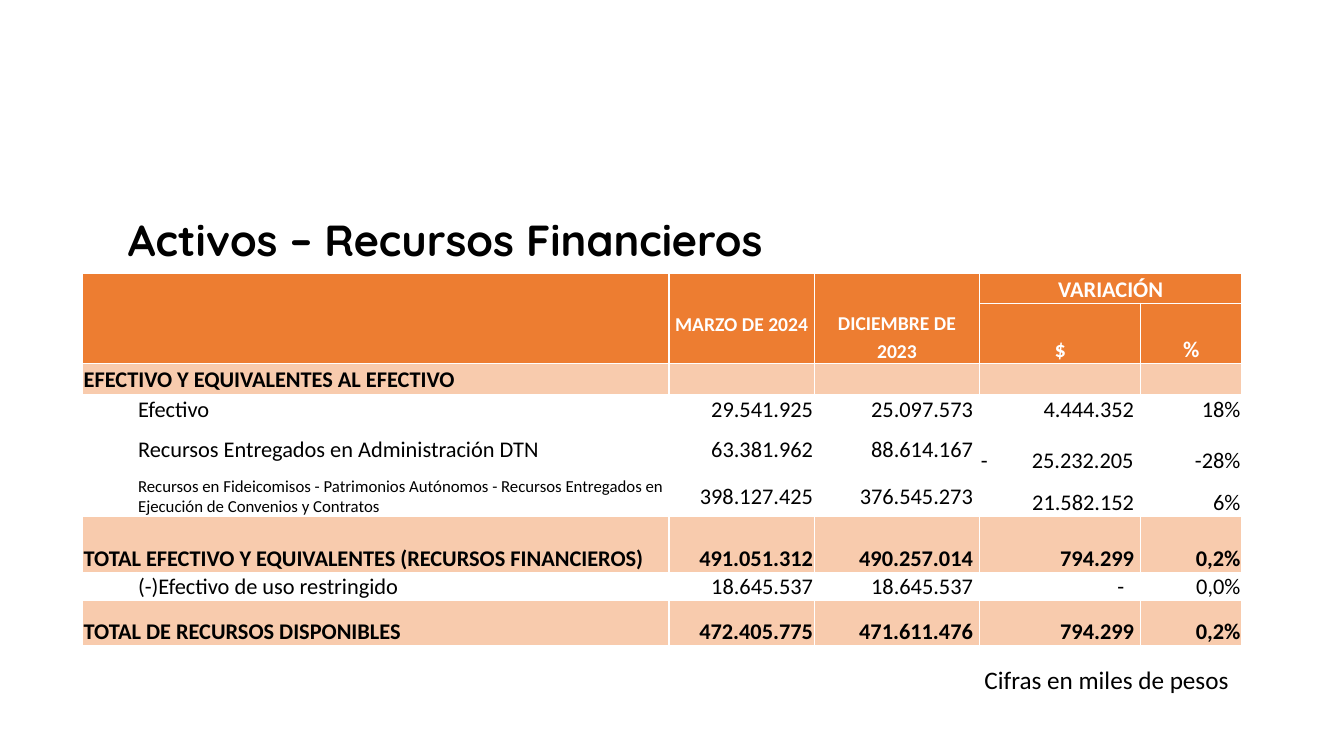
from lxml import etree
from pptx import Presentation
from pptx.dml.color import RGBColor
from pptx.enum.text import MSO_ANCHOR, MSO_AUTO_SIZE, PP_ALIGN
from pptx.oxml.ns import qn
from pptx.util import Cm, Pt

LEFT, CENTER, RIGHT = PP_ALIGN.LEFT, PP_ALIGN.CENTER, PP_ALIGN.RIGHT
TOP, MIDDLE, BOTTOM = MSO_ANCHOR.TOP, MSO_ANCHOR.MIDDLE, MSO_ANCHOR.BOTTOM
NO_FIT = MSO_AUTO_SIZE.NONE

BLACK, WHITE, ORANGE, PEACH = "000000", "FFFFFF", "ED7D31", "F8CBAD"
THIN = 0.03
COLUMN_WIDTHS = [1.37, 13.41, 3.66, 4.17, 4.06, 2.54]
ROW_HEIGHTS = [0.74, 1.52, 0.78, 0.74, 1.29, 1.04, 1.4, 0.72, 1.14]
# Space kept to the right of the figures in columns 2 to 5
FIGURE_MARGINS = [THIN, 0.17, 0.17, THIN]

# Label, figures, is a total or section, anchor of label and balances, label size
BODY_ROWS = [
    ("EFECTIVO Y EQUIVALENTES AL EFECTIVO", ["", "", "", ""], True, MIDDLE, 16),
    ("Efectivo", ["29.541.925", "25.097.573", "4.444.352", "18%"], False, MIDDLE, 16),
    ("Recursos Entregados en Administración DTN",
     ["63.381.962", "88.614.167", "-\t25.232.205", "-28%"], False, MIDDLE, 16),
    ("Recursos en Fideicomisos - Patrimonios Autónomos - Recursos Entregados en "
     "Ejecución de Convenios y Contratos",
     ["398.127.425", "376.545.273", "21.582.152", "6%"], False, MIDDLE, 12),
    ("TOTAL EFECTIVO Y EQUIVALENTES (RECURSOS FINANCIEROS)",
     ["491.051.312", "490.257.014", "794.299", "0,2%"], True, BOTTOM, 16),
    ("(-)Efectivo de uso restringido",
     ["18.645.537", "18.645.537", "-", "0,0%"], False, BOTTOM, 16),
    ("TOTAL DE RECURSOS DISPONIBLES",
     ["472.405.775", "471.611.476", "794.299", "0,2%"], True, BOTTOM, 16),
]


def color(value):
    return RGBColor.from_string(value)


def style_text(para, size, font="Calibri", bold=False, ink=BLACK):
    for span in para.runs:
        span.font.name = font
        span.font.size = Pt(size)
        span.font.bold = bold
        span.font.color.rgb = color(ink)


def add_tab_stop(para, position):
    props = para._p.get_or_add_pPr()
    tabs = etree.SubElement(props, qn("a:tabLst"))
    etree.SubElement(tabs, qn("a:tab"), pos=str(Cm(position)), algn="r")


def add_borders(cell):
    props = cell._tc.get_or_add_tcPr()
    for side in ("a:lnL", "a:lnR", "a:lnT", "a:lnB"):
        line = etree.SubElement(props, qn(side), w=str(Pt(1)))
        fill = etree.SubElement(line, qn("a:solidFill"))
        etree.SubElement(fill, qn("a:srgbClr"), val=WHITE)


def prepare_cell(cell, fill):
    add_borders(cell)
    if fill:
        cell.fill.solid()
        cell.fill.fore_color.rgb = color(fill)
    else:
        cell.fill.background()
    cell.margin_left = cell.margin_right = cell.margin_top = Cm(THIN)
    cell.margin_bottom = 0
    # Empty cells must not stretch their row
    end = cell.text_frame.paragraphs[0]._p.get_or_add_endParaRPr()
    end.set("sz", "1600")


def write_cell(cell, text, align, anchor, size=16, bold=False, ink=BLACK):
    cell.vertical_anchor = anchor
    para = cell.text_frame.paragraphs[0]
    para.text = text
    para.alignment = align
    style_text(para, size, bold=bold, ink=ink)
    return para


def fill_header(table):
    for first, last in (((0, 0), (1, 1)), ((0, 2), (1, 2)),
                        ((0, 3), (1, 3)), ((0, 4), (0, 5))):
        table.cell(*first).merge(table.cell(*last))
    for row, column, text, size in ((0, 2, "MARZO DE 2024", 14),
                                    (0, 3, "DICIEMBRE DE 2023", 14),
                                    (0, 4, "VARIACIÓN", 16),
                                    (1, 4, "$", 16), (1, 5, "%", 16)):
        write_cell(table.cell(row, column), text, CENTER, BOTTOM, size, True, WHITE)
    # March sits level with the first of December's two lines
    march, december = table.cell(0, 2), table.cell(0, 3)
    march.margin_bottom = Cm(0.68)
    december.margin_left = december.margin_right = Cm(0.3)
    december.text_frame.paragraphs[0].line_spacing = Pt(20)


def fill_body_row(table, row, label, figures, strong, anchor, size):
    if strong:
        table.cell(row, 0).merge(table.cell(row, 1))
    write_cell(table.cell(row, 0 if strong else 1), label, LEFT, anchor, size, strong)
    for index, (figure, margin) in enumerate(zip(figures, FIGURE_MARGINS)):
        if not figure:
            continue
        cell = table.cell(row, index + 2)
        signed = "\t" in figure
        cell.margin_right = Cm(0.42 if figure == "-" else margin)
        para = write_cell(cell, figure, LEFT if signed else RIGHT,
                          anchor if index < 2 else BOTTOM, bold=strong)
        if signed:
            add_tab_stop(para, 3.85)


def add_resources_table(page, left, top, width, height):
    frame = page.shapes.add_table(len(ROW_HEIGHTS), len(COLUMN_WIDTHS),
                                  Cm(left), Cm(top), Cm(width), Cm(height))
    table = frame.table
    table.first_row = table.horz_banding = False
    for column, size in zip(table.columns, COLUMN_WIDTHS):
        column.width = Cm(size)
    fills = [ORANGE, ORANGE] + [PEACH if entry[2] else None for entry in BODY_ROWS]
    for row, size, fill in zip(table.rows, ROW_HEIGHTS, fills):
        row.height = Cm(size)
        for cell in row.cells:
            prepare_cell(cell, fill)
    fill_header(table)
    for row, entry in enumerate(BODY_ROWS, start=2):
        fill_body_row(table, row, *entry)


def place_title(page, left, top, width, height):
    title = page.shapes.title
    title.left, title.top = Cm(left), Cm(top)
    title.width, title.height = Cm(width), Cm(height)
    frame = title.text_frame
    frame.text = "Activos – Recursos Financieros"
    frame.auto_size = NO_FIT
    frame.vertical_anchor = TOP
    frame.margin_top = Cm(0.25)
    para = frame.paragraphs[0]
    para.alignment = LEFT
    para.line_spacing = 0.9
    style_text(para, 31, "Quicksand", True)


def add_units_note(page, left, top, width, height):
    box = page.shapes.add_textbox(Cm(left), Cm(top), Cm(width), Cm(height))
    box.text_frame.text = "Cifras en miles de pesos"
    box.text_frame.word_wrap = False
    style_text(box.text_frame.paragraphs[0], 18)


def main():
    deck = Presentation()
    deck.slide_width, deck.slide_height = Cm(33.87), Cm(19.05)
    page = deck.slides.add_slide(deck.slide_layouts[5])
    place_title(page, 2.97, 5.26, 29.21, 3.68)
    add_units_note(page, 24.56, 16.61, 6.73, 1.02)
    add_resources_table(page, 2.08, 6.9, sum(COLUMN_WIDTHS), sum(ROW_HEIGHTS))
    deck.save("out.pptx")


if __name__ == "__main__":
    main()
